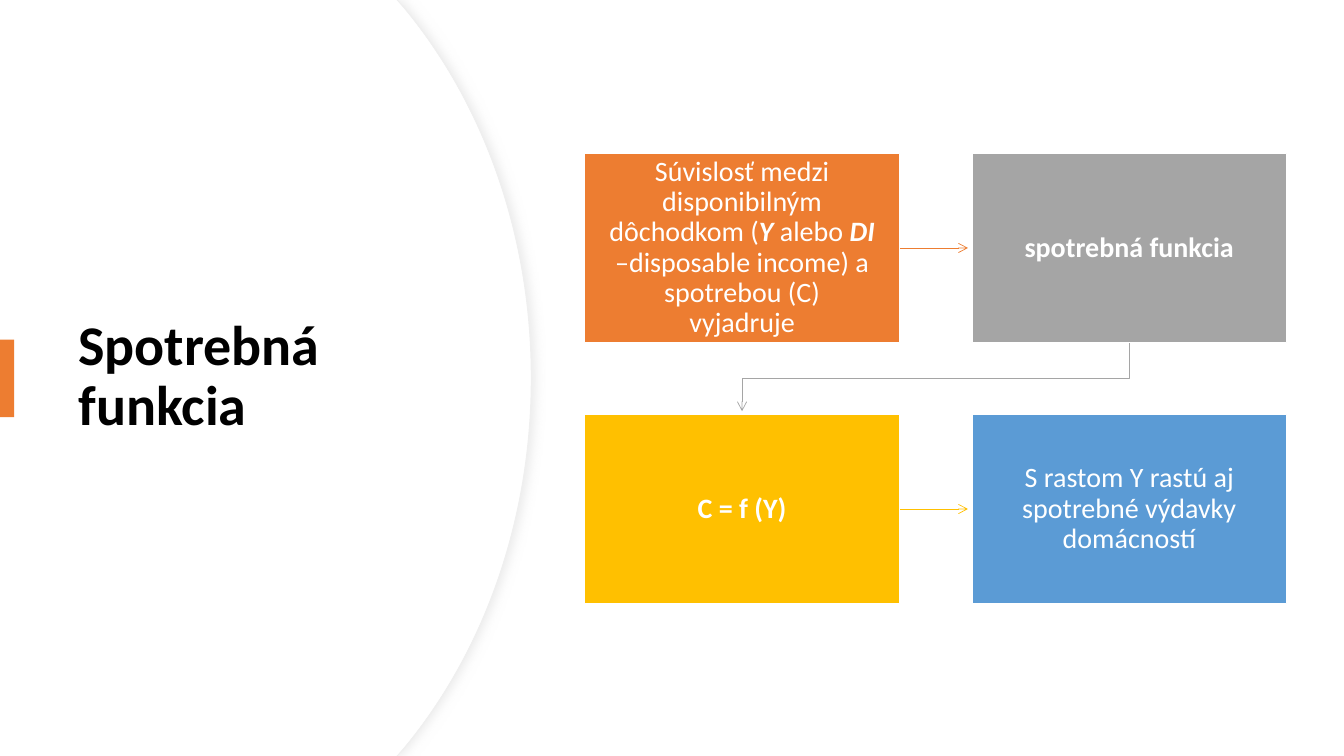
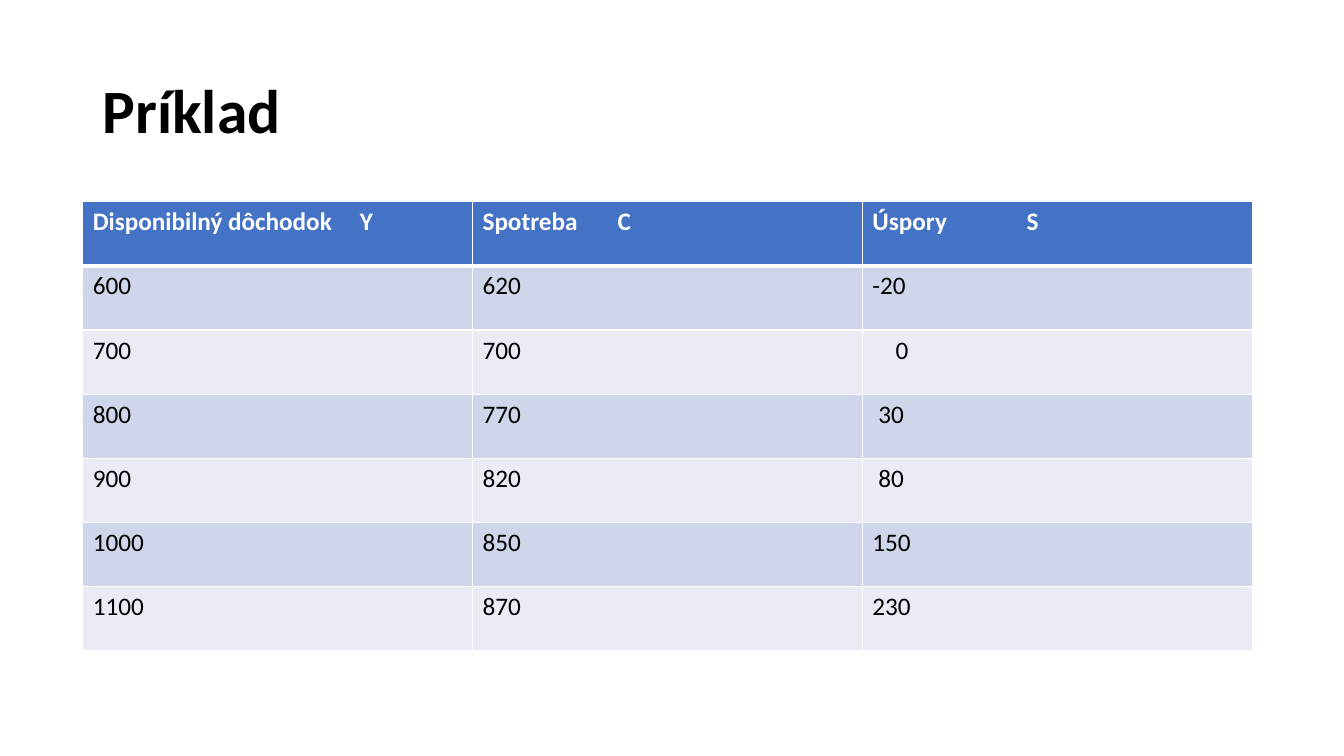
from dataclasses import dataclass

from lxml import etree
from pptx import Presentation
from pptx.dml.color import RGBColor
from pptx.enum.shapes import MSO_CONNECTOR, MSO_SHAPE
from pptx.enum.text import MSO_ANCHOR, PP_ALIGN
from pptx.oxml.ns import qn
from pptx.util import Inches, Pt

RECTANGLE = MSO_SHAPE.RECTANGLE
STRAIGHT = MSO_CONNECTOR.STRAIGHT
MIDDLE = MSO_ANCHOR.MIDDLE
CENTER = PP_ALIGN.CENTER


@dataclass(frozen=True)
class Theme:
    font: str = "Calibri"
    white: RGBColor = RGBColor.from_string("FFFFFF")
    black: RGBColor = RGBColor.from_string("000000")
    orange: RGBColor = RGBColor.from_string("ED7D31")
    gray: RGBColor = RGBColor.from_string("A5A5A5")
    gold: RGBColor = RGBColor.from_string("FFC000")
    blue: RGBColor = RGBColor.from_string("5B9BD5")
    edge: RGBColor = RGBColor.from_string("EFEFEF")
    shade: RGBColor = RGBColor.from_string("D9D9D9")
    header: RGBColor = RGBColor.from_string("4472C4")
    band_dark: RGBColor = RGBColor.from_string("CFD5EA")
    band_light: RGBColor = RGBColor.from_string("E9EBF5")
    side_title: Pt = Pt(40)
    top_title: Pt = Pt(44)
    box_text: Pt = Pt(20)
    table_text: Pt = Pt(18)


theme = Theme()


def add_title(slide, text, size, left, top, width, height):
    title = slide.shapes.add_textbox(Inches(left), Inches(top), Inches(width), Inches(height))
    frame = title.text_frame
    frame.word_wrap = True
    frame.vertical_anchor = MIDDLE
    paragraph = frame.paragraphs[0]
    paragraph.text = text
    paragraph.line_spacing = 0.9
    paragraph.font.name = theme.font
    paragraph.font.size = size
    paragraph.font.bold = True
    paragraph.font.color.rgb = theme.black


def style_arrow(arrow, color):
    arrow.line.color.rgb = color
    arrow.line.width = Pt(0.5)
    properties = arrow._element.spPr
    etree.SubElement(properties.find(qn("a:ln")), qn("a:tailEnd"), type="arrow")
    etree.SubElement(properties, qn("a:effectLst"))


deck = Presentation()
deck.slide_width = Inches(13.33)
deck.slide_height = Inches(7.5)
blank = deck.slide_layouts[6]

function_slide = deck.slides.add_slide(blank)

panel_points = [
    (3.94, 0), (4.01, 0.08),
    (4.79, 1.02), (5.27, 2.32), (5.27, 3.75),
    (5.27, 5.18), (4.79, 6.48), (4.01, 7.42),
    (3.94, 7.5),
]
CURVE_STARTS = (2, 5)
for shift, outlined in [(0, True), (0.01, False)]:
    builder = function_slide.shapes.build_freeform(0, 0)
    outline = [(Inches(x - shift), Inches(y)) for x, y in panel_points]
    builder.add_line_segments(outline + [(0, Inches(7.5))], close=True)
    panel = builder.convert_to_shape()
    segments = list(panel._element.spPr.iter(qn("a:lnTo")))
    for start in CURVE_STARTS:
        curve = etree.Element(qn("a:cubicBezTo"))
        segments[start].addprevious(curve)
        for segment in segments[start:start + 3]:
            curve.append(segment[0])
            segment.getparent().remove(segment)
    panel.fill.solid()
    panel.fill.fore_color.rgb = theme.white
    panel.shadow.inherit = False
    if outlined:
        panel.line.color.rgb = theme.edge
        panel.line.width = Pt(0.75)
        effects = panel._element.spPr.find(qn("a:effectLst"))
        shadow = etree.SubElement(
            effects, qn("a:outerShdw"), blurRad=str(Pt(7)), dist=str(Pt(3)), algn="l", rotWithShape="0")
        shade = etree.SubElement(shadow, qn("a:srgbClr"), val=str(theme.shade))
        etree.SubElement(shade, qn("a:alpha"), val="50000")
    else:
        panel.line.fill.background()

add_title(function_slide, "Spotrebná funkcia", theme.side_title, 0.68, 1.27, 3.94, 4.95)

accent = function_slide.shapes.add_shape(RECTANGLE, 0, Inches(3.37), Inches(0.14), Inches(0.77))
accent.shadow.inherit = False
accent.fill.solid()
accent.fill.fore_color.rgb = theme.orange
accent.line.fill.background()

BOX_LEFT, BOX_TOP, BOX_WIDTH, BOX_HEIGHT = 5.8, 1.52, 3.12, 1.88
PITCH_X, PITCH_Y = 3.84, 2.59
ARROW_LENGTH = 0.68

first_center = BOX_LEFT + BOX_WIDTH / 2
second_center = first_center + PITCH_X
first_bottom = BOX_TOP + BOX_HEIGHT
bend = [(second_center, 3.75), (first_center, 3.75), (first_center, first_bottom + ARROW_LENGTH)]
builder = function_slide.shapes.build_freeform(Inches(second_center), Inches(first_bottom))
builder.add_line_segments([(Inches(x), Inches(y)) for x, y in bend], close=False)
return_arrow = builder.convert_to_shape()
return_arrow.fill.background()
style_arrow(return_arrow, theme.gray)

steps = [
    (theme.orange, [
        ("Súvislosť medzi disponibilným dôchodkom (", False, False),
        ("Y ", True, True),
        ("alebo ", False, False),
        ("DI ", True, True),
        ("–disposable income) a\nspotrebou (C)\nvyjadruje", False, False),
    ]),
    (theme.gray, [("spotrebná funkcia", True, False)]),
    (theme.gold, [("C = f (Y)", True, False)]),
    (theme.blue, [("S rastom Y rastú aj spotrebné výdavky domácností", False, False)]),
]
for index, (color, pieces) in enumerate(steps):
    row, column = divmod(index, 2)
    left = BOX_LEFT + column * PITCH_X
    top = BOX_TOP + row * PITCH_Y
    if column == 0:
        start = left + BOX_WIDTH
        middle = Inches(top + BOX_HEIGHT / 2)
        arrow = function_slide.shapes.add_connector(
            STRAIGHT, Inches(start), middle, Inches(start + ARROW_LENGTH), middle)
        style_arrow(arrow, color)
    box = function_slide.shapes.add_shape(
        RECTANGLE, Inches(left), Inches(top), Inches(BOX_WIDTH), Inches(BOX_HEIGHT))
    if column == 0:
        arrow.begin_connect(box, 3)
    box.shadow.inherit = False
    box.fill.solid()
    box.fill.fore_color.rgb = color
    box.line.color.rgb = theme.white
    box.line.width = Pt(1)
    frame = box.text_frame
    frame.word_wrap = True
    frame.vertical_anchor = MIDDLE
    frame.margin_left = frame.margin_right = Inches(0.15)
    frame.margin_top = frame.margin_bottom = Inches(0.16)
    paragraph = frame.paragraphs[0]
    paragraph.alignment = CENTER
    paragraph.line_spacing = 0.9
    paragraph.font.name = theme.font
    paragraph.font.size = theme.box_text
    paragraph.font.color.rgb = theme.white
    for text, bold, italic in pieces:
        for number, line in enumerate(text.split("\n")):
            if number:
                paragraph.add_line_break()
            run = paragraph.add_run()
            run.text = line
            run.font.bold = bold
            run.font.italic = italic

example_slide = deck.slides.add_slide(blank)
add_title(example_slide, "Príklad", theme.top_title, 0.92, 0.4, 11.5, 1.45)

rows = [
    ("Disponibilný dôchodok\tY", "Spotreba\tC", "Úspory\tS"),
    ("600", "620", "-20"),
    ("700", "700", "0"),
    ("800", "770", "30"),
    ("900", "820", "80"),
    ("1000", "850", "150"),
    ("1100", "870", "230"),
]
symbol_tabs = [2.65, 1.34, 1.53]
savings_indents = {"0": 0.23, "30": 0.06, "80": 0.06}
table = example_slide.shapes.add_table(
    len(rows), 3, Inches(0.82), Inches(2), Inches(11.6), Inches(4.46)).table
for r, values in enumerate(rows):
    for c, value in enumerate(values):
        cell = table.cell(r, c)
        cell_properties = cell._tc.get_or_add_tcPr()
        for side in "LRTB":
            thick = (r, side) in [(0, "B"), (1, "T")]
            border = etree.SubElement(cell_properties, qn(f"a:ln{side}"), w=str(Pt(3 if thick else 1)))
            border_fill = etree.SubElement(border, qn("a:solidFill"))
            etree.SubElement(border_fill, qn("a:srgbClr"), val=str(theme.white))
        cell.fill.solid()
        paragraph = cell.text_frame.paragraphs[0]
        paragraph.text = value
        if r == 0:
            cell.fill.fore_color.rgb = theme.header
            tabs = etree.SubElement(paragraph._p.get_or_add_pPr(), qn("a:tabLst"))
            etree.SubElement(tabs, qn("a:tab"), pos=str(Inches(symbol_tabs[c])), algn="l")
        else:
            cell.fill.fore_color.rgb = theme.band_dark if r % 2 else theme.band_light
            cell.margin_left = Inches(0.1 + savings_indents.get(value, 0))
        paragraph.font.name = theme.font
        paragraph.font.size = theme.table_text
        paragraph.font.bold = r == 0
        paragraph.font.color.rgb = theme.white if r == 0 else theme.black

deck.save("out.pptx")
